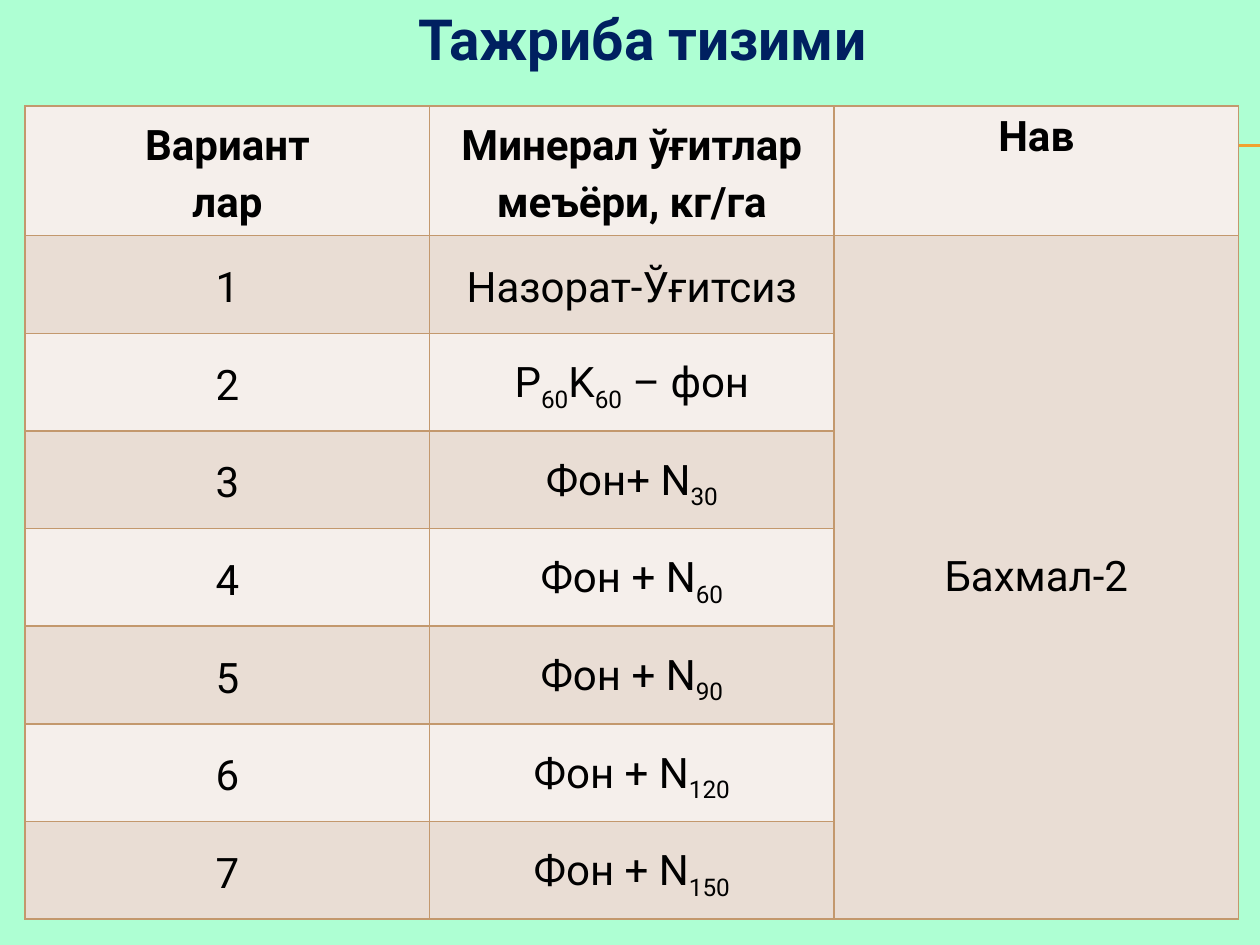
from dataclasses import dataclass

from lxml.etree import SubElement
from pptx import Presentation
from pptx.dml.color import RGBColor
from pptx.enum.shapes import MSO_CONNECTOR
from pptx.enum.text import MSO_ANCHOR as Anchor, MSO_AUTO_SIZE as AutoSize, PP_ALIGN as Align
from pptx.oxml import parse_xml
from pptx.oxml.ns import nsdecls, qn
from pptx.util import Inches, Pt

FONT = "Roboto"
MINT = RGBColor(0xAE, 0xFF, 0xD3)
NAVY = RGBColor(0x00, 0x20, 0x60)
BLACK = RGBColor(0x00, 0x00, 0x00)
AMBER = RGBColor(0xF0, 0xA2, 0x2E)
TAN = RGBColor(0xC3, 0x98, 0x6D)
LIGHT = RGBColor(0xF5, 0xEF, 0xEB)
DARK = RGBColor(0xE9, 0xDD, 0xD4)

COLUMN_WIDTH = Inches(3.21)
HEADER_HEIGHT = Inches(1.03)
ROW_HEIGHT = Inches(0.775)


@dataclass(frozen=True)
class Part:
    text: str
    subscript: bool = False


@dataclass(frozen=True)
class Entry:
    paragraphs: tuple[tuple[Part, ...], ...]
    bold: bool = False
    anchor: Anchor = Anchor.MIDDLE
    compact: bool = True


def plain(*lines: str, **options) -> Entry:
    """Describe a cell with one ordinary run in each paragraph."""
    return Entry(tuple((Part(line),) for line in lines), **options)


def nitrogen(prefix: str, dose: int) -> Entry:
    """Describe a treatment with a nitrogen dose as subscript."""
    return Entry(((Part(f"{prefix} N"), Part(str(dose), True)),))


HEADERS = (
    plain("Вариант", "лар", bold=True),
    plain("Минерал ўғитлар меъёри, кг/га", bold=True),
    plain("Нав", bold=True, anchor=Anchor.TOP, compact=False),
)
TREATMENTS = (
    plain("Назорат-Ўғитсиз"),
    Entry(((Part("P"), Part("60", True), Part("K"), Part("60", True), Part(" – фон")),)),
    nitrogen("Фон+", 30),
    *(nitrogen("Фон +", dose) for dose in (60, 90, 120, 150)),
)
VARIETY = plain("Бахмал-2", compact=False)


def add_run(para, part: Part, size: float, color: RGBColor, bold: bool) -> None:
    """Append one formatted run to a paragraph."""
    run = para.add_run()
    run.text = part.text
    font = run.font
    font.name, font.size, font.bold = FONT, Pt(size), bold
    font.color.rgb = color
    if part.subscript:
        run._r.get_or_add_rPr().set("baseline", "-25000")


def style_cell(cell, fill: RGBColor) -> None:
    """Fill a cell and outline its four sides."""
    cell.fill.solid()
    cell.fill.fore_color.rgb = fill
    properties = cell._tc.get_or_add_tcPr()
    for index, side in enumerate("LRTB"):
        properties.insert(index, parse_xml(
            f'<a:ln{side} {nsdecls("a")} w="{Pt(1)}"><a:solidFill>'
            f'<a:srgbClr val="{TAN}"/></a:solidFill></a:ln{side}>'))


def write_cell(cell, entry: Entry) -> None:
    """Write an entry into a table cell."""
    cell.vertical_anchor = entry.anchor
    if entry.compact:
        cell.margin_left = cell.margin_right = Inches(0.07)
        cell.margin_top = cell.margin_bottom = 0
    frame = cell.text_frame
    for index, parts in enumerate(entry.paragraphs):
        para = frame.add_paragraph() if index else frame.paragraphs[0]
        para.alignment = Align.CENTER
        if entry.compact:
            para.line_spacing = 1.15
        for part in parts:
            add_run(para, part, 24, BLACK, entry.bold)


def add_title(slide, text: str) -> None:
    """Place and format the title placeholder."""
    title = slide.shapes.title
    title.left, title.top = Inches(0.35), 0
    title.width, title.height = Inches(9.5), Inches(0.6)
    frame = title.text_frame
    frame.auto_size = AutoSize.NONE
    frame.vertical_anchor = Anchor.MIDDLE
    para = frame.paragraphs[0]
    para.alignment = Align.CENTER
    add_run(para, Part(text), 32.4, NAVY, True)


def add_rule(slide, top: float, right: int) -> None:
    """Draw a thin horizontal rule to the right edge."""
    rule = slide.shapes.add_connector(
        MSO_CONNECTOR.STRAIGHT, Inches(0.56), Inches(top), right, Inches(top))
    rule.line.color.rgb = AMBER
    rule.line.width = Pt(0.75)
    SubElement(rule._element.spPr, qn("a:effectLst"))


def add_trial_table(slide) -> None:
    """Build the table of variants, fertilizer rates and variety."""
    row_count = len(TREATMENTS) + 1
    table = slide.shapes.add_table(
        row_count, len(HEADERS), Inches(0.2), Inches(0.84),
        COLUMN_WIDTH * len(HEADERS), HEADER_HEIGHT + ROW_HEIGHT * len(TREATMENTS)).table
    table.first_row = table.horz_banding = False
    for column in table.columns:
        column.width = COLUMN_WIDTH
    for index, row in enumerate(table.rows):
        row.height = ROW_HEIGHT if index else HEADER_HEIGHT
        for column, cell in enumerate(row.cells):
            merged = index and column == 2
            style_cell(cell, DARK if merged or index % 2 else LIGHT)
    for column, entry in enumerate(HEADERS):
        write_cell(table.cell(0, column), entry)
    for number, treatment in enumerate(TREATMENTS, 1):
        write_cell(table.cell(number, 0), plain(str(number)))
        write_cell(table.cell(number, 1), treatment)
    table.cell(1, 2).merge(table.cell(row_count - 1, 2))
    write_cell(table.cell(1, 2), VARIETY)


def main() -> None:
    """Build and save the trial scheme slide."""
    deck = Presentation()
    deck.slide_width, deck.slide_height = Inches(10), Inches(7.5)
    slide = deck.slides.add_slide(deck.slide_layouts.get_by_name("Title Only"))
    slide.background.fill.solid()
    slide.background.fill.fore_color.rgb = MINT
    for top in (1.15, 1.16):
        add_rule(slide, top, deck.slide_width)
    add_title(slide, "Тажриба тизими")
    add_trial_table(slide)
    deck.save("out.pptx")


if __name__ == "__main__":
    main()
